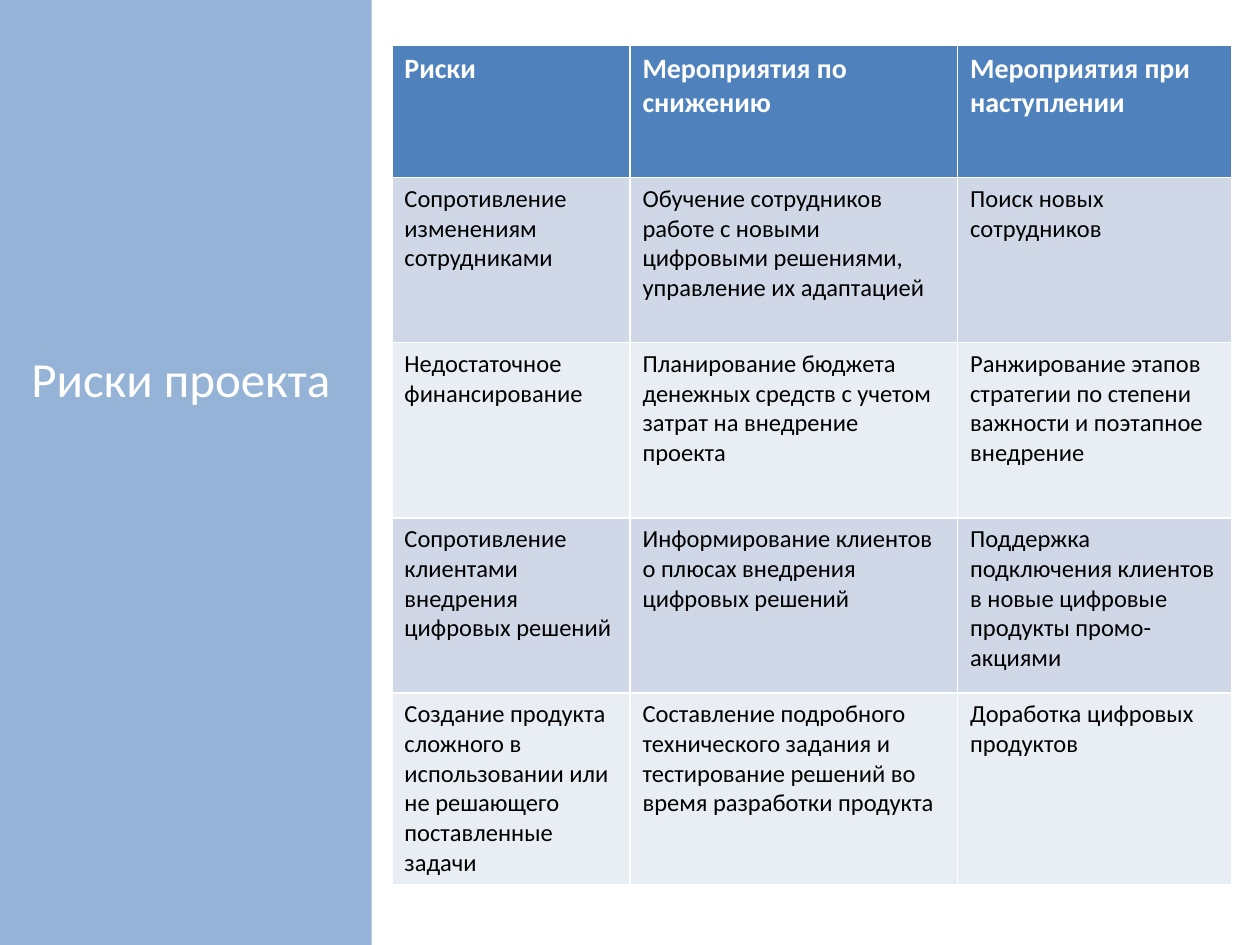
import pptx
import pptx.dml.color
import pptx.enum.shapes
import pptx.enum.text
import pptx.util

INCH = pptx.util.Inches
FONT = "Calibri"
COLORS = {
    "panel": "95B3D7",
    "header": "4F81BD",
    "odd_row": "D0D8E8",
    "even_row": "E9EDF4",
    "light_text": "FFFFFF",
    "dark_text": "000000",
}
COLUMN_WIDTHS = [1.89, 2.6, 2.18]
HEADER_HEIGHT = 1.05
ROW_HEIGHTS = [HEADER_HEIGHT, 1.31, 1.39, 1.39, 1.39]
RISKS = [
    ["Риски", "Мероприятия по снижению", "Мероприятия при наступлении"],
    [
        "Сопротивление изменениям сотрудниками",
        "Обучение сотрудников работе с новыми цифровыми решениями, управление их адаптацией",
        "Поиск новых сотрудников",
    ],
    [
        "Недостаточное финансирование",
        "Планирование бюджета денежных средств с учетом затрат на внедрение проекта",
        "Ранжирование этапов стратегии по степени важности и поэтапное внедрение",
    ],
    [
        "Сопротивление клиентами внедрения цифровых решений",
        "Информирование клиентов о плюсах внедрения цифровых решений",
        "Поддержка подключения клиентов в новые цифровые продукты промо-акциями",
    ],
    [
        "Создание продукта сложного в использовании или не решающего поставленные задачи",
        "Составление подробного технического задания и тестирование решений во время разработки продукта",
        "Доработка цифровых продуктов",
    ],
]


def color(name):
    return pptx.dml.color.RGBColor.from_string(COLORS[name])


def paint(target, name):
    target.fill.solid()
    target.fill.fore_color.rgb = color(name)


def write(frame, text, size, color_name, bold=False):
    frame.text = text
    for para in frame.paragraphs:
        for span in para.runs:
            span.font.name = FONT
            span.font.size = pptx.util.Pt(size)
            span.font.bold = bold
            span.font.color.rgb = color(color_name)


def add_title(page, text):
    title = page.shapes.title
    title.left, title.top = INCH(0), INCH(2.33)
    title.width, title.height = INCH(2.87), INCH(1.34)
    frame = title.text_frame
    write(frame, text, 28, "light_text")
    frame.word_wrap = True
    frame.vertical_anchor = pptx.enum.text.MSO_ANCHOR.MIDDLE
    frame.paragraphs[0].alignment = pptx.enum.text.PP_ALIGN.CENTER
    return title


def add_side_panel(page, height, title):
    panel = page.shapes.add_shape(
        pptx.enum.shapes.MSO_SHAPE.RECTANGLE, 0, 0, INCH(2.95), height
    )
    panel.shadow.inherit = False
    paint(panel, "panel")
    panel.line.fill.background()
    title.element.addprevious(panel.element)


def add_risk_table(page):
    table = page.shapes.add_table(
        len(RISKS), len(COLUMN_WIDTHS), INCH(3.11), INCH(0.36),
        INCH(sum(COLUMN_WIDTHS)), INCH(sum(ROW_HEIGHTS)),
    ).table
    for column, width in zip(table.columns, COLUMN_WIDTHS):
        column.width = INCH(width)
    for row, height in zip(table.rows, ROW_HEIGHTS):
        row.height = INCH(height)
    for row_number, texts in enumerate(RISKS):
        is_header = row_number == 0
        band = "odd_row" if row_number % 2 else "even_row"
        for column_number, text in enumerate(texts):
            cell = table.cell(row_number, column_number)
            paint(cell, "header" if is_header else band)
            if is_header:
                write(cell.text_frame, text, 16, "light_text", bold=True)
            else:
                write(cell.text_frame, text, 14, "dark_text")


def main():
    deck = pptx.Presentation()
    deck.slide_width, deck.slide_height = INCH(10), INCH(7.5)
    page = deck.slides.add_slide(deck.slide_layouts[5])
    title = add_title(page, "Риски проекта")
    add_side_panel(page, deck.slide_height, title)
    add_risk_table(page)
    deck.save("out.pptx")


if __name__ == "__main__":
    main()
